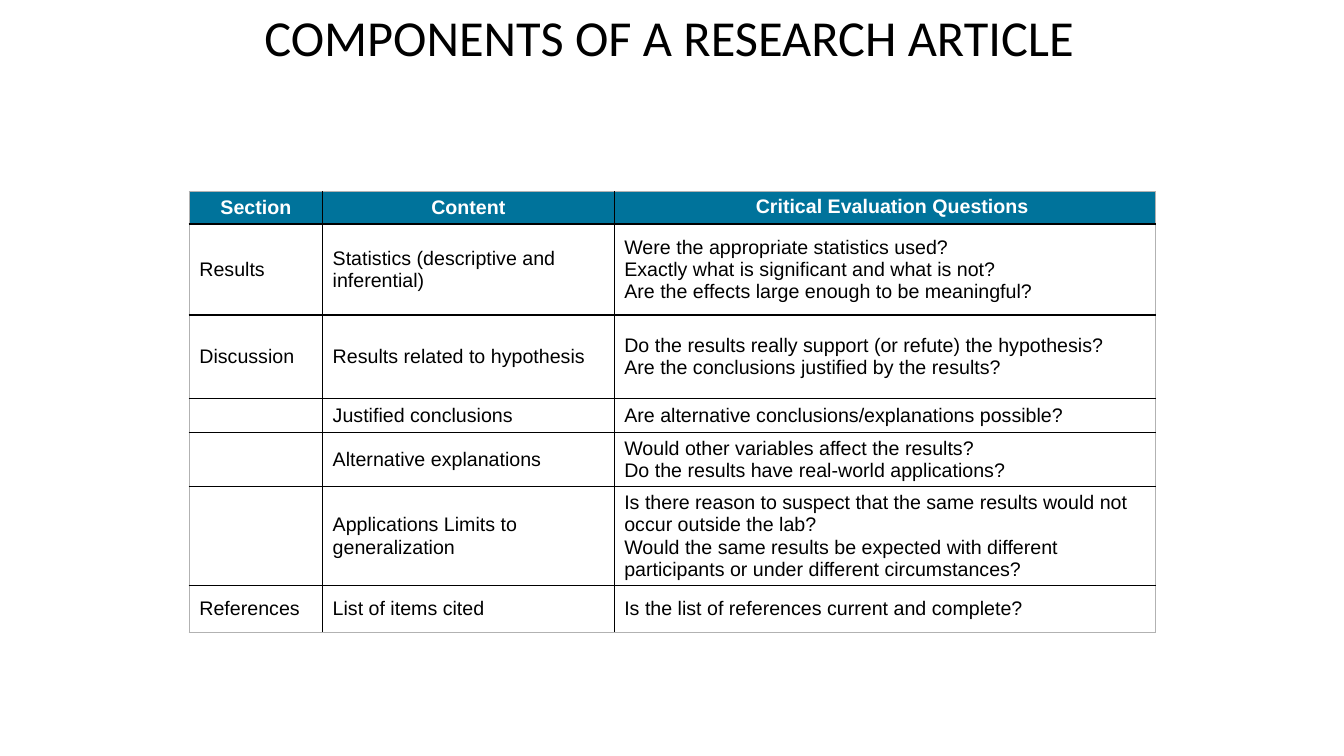
from dataclasses import dataclass

from lxml import etree
from pptx import Presentation
from pptx import util as u
from pptx.dml import color
from pptx.enum import text
from pptx.oxml import ns


@dataclass(frozen=True)
class Theme:
    ink: str = "000000"
    paper: str = "FFFFFF"
    header: str = "00739B"
    frame: str = "B2B2B2"
    title_font: str = "Calibri"
    table_font: str = "Arial"
    title_size: float = 36
    table_size: float = 14
    line_width: float = 1


THEME = Theme()
COLUMN_WIDTHS = [95.4, 208.6, 387]
ROW_HEIGHTS = [22.9, 65, 59.6, 22.9, 39, 70.4, 33.6]
ROWS = [
    ("Section", "Content", ["Critical Evaluation Questions"]),
    ("Results", "Statistics (descriptive and inferential)", [
        "Were the appropriate statistics used?",
        "Exactly what is significant and what is not?",
        "Are the effects large enough to be meaningful?"]),
    ("Discussion", "Results related to hypothesis", [
        "Do the results really support (or refute) the hypothesis?",
        "Are the conclusions justified by the results?"]),
    ("", "Justified conclusions", [
        "Are alternative conclusions/explanations possible?"]),
    ("", "Alternative explanations", [
        "Would other variables affect the results?",
        "Do the results have real-world applications?"]),
    ("", "Applications Limits to generalization", [
        "Is there reason to suspect that the same results would not occur outside the lab?",
        "Would the same results be expected with different participants or under different circumstances?"]),
    ("References", "List of items cited", [
        "Is the list of references current and complete?"]),
]


def add_run(paragraph, words, font, size, ink, bold=False):
    run = paragraph.add_run()
    run.text = words
    run.font.name = font
    run.font.size = u.Pt(size)
    run.font.bold = bold
    run.font.color.rgb = color.RGBColor.from_string(ink)


def set_borders(cell, edges):
    properties = cell._tc.get_or_add_tcPr()
    for position, (tag, line_color) in enumerate(edges.items()):
        line = etree.Element(ns.qn(f"a:{tag}"), w=str(u.Pt(THEME.line_width)))
        fill = etree.SubElement(line, ns.qn("a:solidFill"))
        etree.SubElement(fill, ns.qn("a:srgbClr"), val=line_color)
        properties.insert(position, line)


def fill_cell(cell, lines, is_header):
    cell.fill.solid()
    cell.fill.fore_color.rgb = color.RGBColor.from_string(
        THEME.header if is_header else THEME.paper)
    cell.vertical_anchor = text.MSO_ANCHOR.MIDDLE
    frame = cell.text_frame
    for index, words in enumerate(lines):
        paragraph = frame.add_paragraph() if index else frame.paragraphs[0]
        paragraph.alignment = text.PP_ALIGN.CENTER if is_header else text.PP_ALIGN.LEFT
        if words:
            add_run(paragraph, words, THEME.table_font, THEME.table_size,
                    THEME.paper if is_header else THEME.ink, is_header)
        else:
            etree.SubElement(paragraph._p, ns.qn("a:endParaRPr"),
                             sz=str(round(THEME.table_size * 100)))


def add_title(slide, words, left, top, width, height):
    title = slide.shapes.title
    title.left, title.top, title.width, title.height = map(
        u.Pt, (left, top, width, height))
    frame = title.text_frame
    frame.word_wrap = True
    frame.auto_size = text.MSO_AUTO_SIZE.NONE
    frame.vertical_anchor = text.MSO_ANCHOR.TOP
    paragraph = frame.paragraphs[0]
    paragraph.alignment = text.PP_ALIGN.CENTER
    paragraph.line_spacing = 0.9
    add_run(paragraph, words, THEME.title_font, THEME.title_size, THEME.ink)


def add_components_table(slide, left, top, width, height):
    table = slide.shapes.add_table(
        len(ROWS), len(COLUMN_WIDTHS), *map(u.Pt, (left, top, width, height))).table
    table.first_row = table.horz_banding = False
    for column, share in zip(table.columns, COLUMN_WIDTHS):
        column.width = u.Pt(width * share / sum(COLUMN_WIDTHS))
    for row, share in zip(table.rows, ROW_HEIGHTS):
        row.height = u.Pt(height * share / sum(ROW_HEIGHTS))
    last_row, last_column = len(ROWS) - 1, len(COLUMN_WIDTHS) - 1
    for r, (section, content, questions) in enumerate(ROWS):
        for c, lines in enumerate(([section], [content], questions)):
            cell = table.cell(r, c)
            fill_cell(cell, lines, r == 0)
            outer = {"lnL": c == 0, "lnR": c == last_column,
                     "lnT": r == 0, "lnB": r == last_row}
            set_borders(cell, {tag: THEME.frame if edge else THEME.ink
                               for tag, edge in outer.items()})
    question_header = table.cell(0, last_column)
    question_header.margin_left = u.Pt(10.8)
    question_header.margin_right = question_header.margin_top = u.Pt(0)
    question_header.margin_bottom = u.Pt(1.4)


def main():
    presentation = Presentation()
    presentation.slide_width, presentation.slide_height = u.Pt(960), u.Pt(540)
    slide = presentation.slides.add_slide(presentation.slide_layouts[5])
    slide.background.fill.solid()
    slide.background.fill.fore_color.rgb = color.RGBColor.from_string(THEME.paper)
    add_title(slide, "COMPONENTS OF A RESEARCH ARTICLE", 126.7, 5.8, 702.7, 105)
    add_components_table(slide, 135.2, 137, 690, 313.4)
    presentation.save("out.pptx")


if __name__ == "__main__":
    main()
